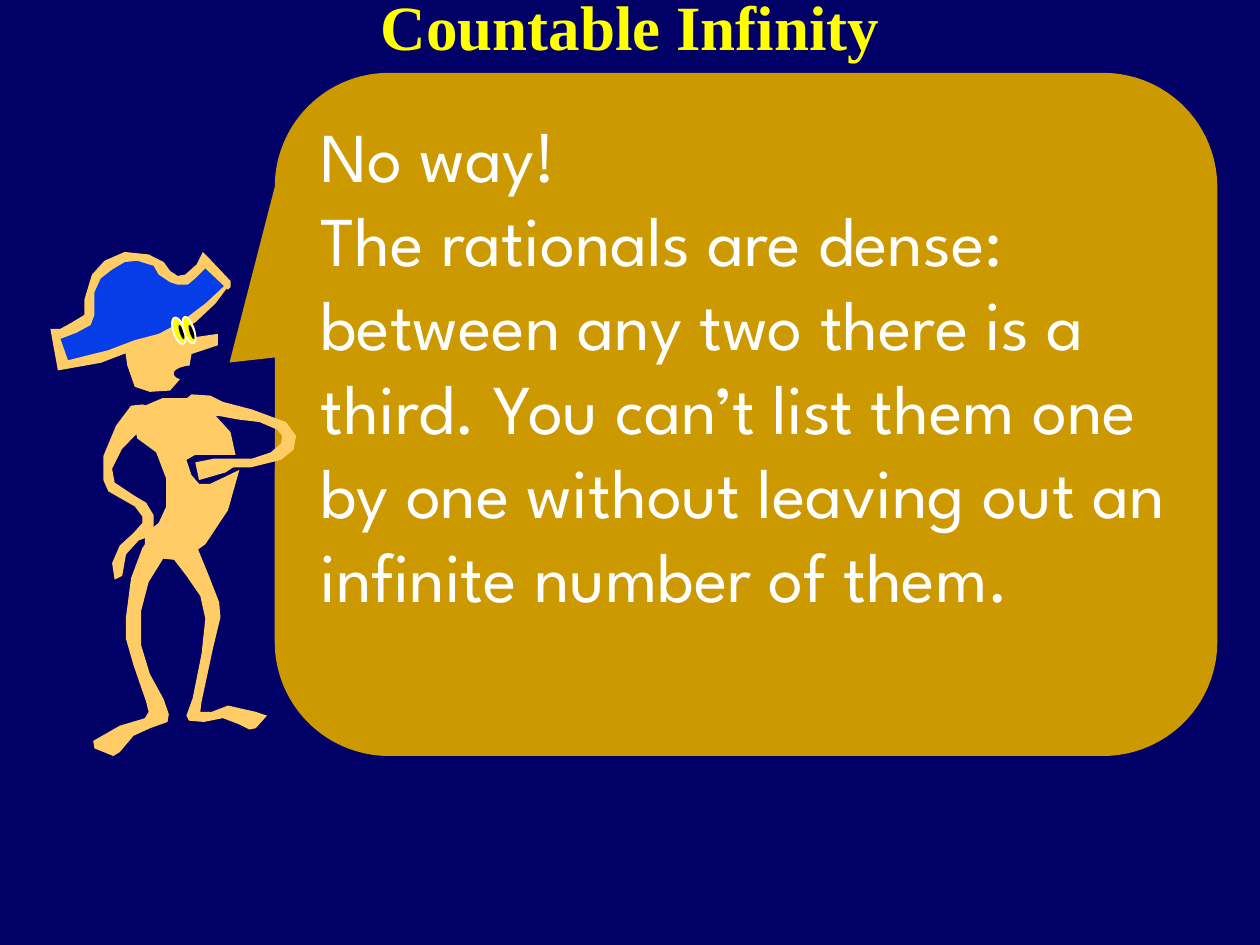
from dataclasses import dataclass

import pptx
import pptx.dml.color
import pptx.enum.shapes
import pptx.enum.text
import pptx.util

Cm = pptx.util.Cm
SHAPES = pptx.enum.shapes.MSO_SHAPE
ANCHORS = pptx.enum.text.MSO_ANCHOR
ALIGNMENTS = pptx.enum.text.PP_ALIGN

COLORS = {
    "night": "000066",
    "gold": "CC9900",
    "skin": "FFCC66",
    "hat": "063DE8",
    "yellow": "FFFF00",
    "white": "FFFFFF",
    "black": "000000",
}
GRID = Cm(0.0254)  # the pirate is drawn on a grid of this pitch


@dataclass
class Outline:
    color: str
    points: list[tuple[int, int]]


@dataclass
class Oval:
    color: str
    left: int
    top: int
    width: int
    height: int
    rotation: float = 0
    border: str | None = None


HEAD = Outline("skin", [
    (152, 268), (146, 244), (130, 236), (115, 236), (106, 244), (98, 269), (101, 290),
    (107, 307), (119, 311), (135, 310), (150, 293), (152, 281), (173, 274), (173, 265)])
TORSO = Outline("skin", [
    (183, 343), (163, 321), (151, 316), (129, 316), (108, 325), (106, 335), (109, 348),
    (124, 359), (132, 380), (132, 402), (126, 415), (115, 424), (115, 435), (120, 440),
    (126, 443), (145, 445), (163, 432), (181, 405), (190, 373), (167, 384), (158, 384),
    (152, 377), (148, 365), (155, 361), (181, 361), (187, 361)])
ARM_ON_HIP = Outline("skin", [
    (127, 332), (122, 324), (113, 321), (104, 322), (92, 338), (82, 362), (82, 381),
    (86, 390), (107, 402), (113, 410), (113, 415), (106, 423), (95, 433), (89, 447),
    (91, 460), (97, 457), (100, 440), (110, 429), (118, 426), (122, 421), (122, 409),
    (116, 399), (106, 393), (91, 383), (89, 372), (97, 356), (110, 343)])
BENT_ARM = Outline("skin", [
    (167, 314), (152, 313), (146, 318), (150, 326), (162, 330), (173, 330), (189, 333),
    (206, 335), (220, 341), (224, 346), (223, 352), (215, 359), (200, 364), (183, 364),
    (170, 364), (155, 367), (158, 381), (179, 375), (185, 371), (199, 371), (223, 365),
    (233, 357), (235, 346), (227, 335), (200, 325), (177, 319)])
BACK_LEG = Outline("skin", [
    (138, 419), (122, 422), (113, 435), (104, 459), (100, 490), (100, 507), (106, 528),
    (116, 557), (118, 565), (115, 570), (95, 576), (74, 588), (75, 594), (90, 600),
    (95, 597), (106, 584), (119, 578), (133, 573), (134, 567), (130, 555), (119, 535),
    (112, 512), (112, 485), (118, 462), (131, 441), (136, 429)])
FRONT_LEG = Outline("skin", [
    (141, 419), (137, 423), (135, 433), (138, 444), (148, 457), (159, 473), (163, 491),
    (160, 519), (153, 554), (148, 568), (150, 572), (162, 573), (177, 570), (190, 575),
    (198, 579), (203, 578), (212, 568), (203, 565), (181, 560), (168, 565), (159, 565),
    (160, 557), (169, 515), (175, 490), (174, 478), (165, 455), (156, 433)])
HAT = Outline("hat", [
    (181, 226), (163, 207), (155, 216), (146, 221), (136, 221), (126, 212), (115, 205),
    (101, 204), (87, 210), (77, 218), (73, 229), (72, 243), (69, 256), (61, 262),
    (51, 265), (42, 267), (49, 292), (72, 288), (95, 281), (113, 273), (133, 265),
    (155, 256), (172, 237)])
HAT_TRIM = Outline("skin", [
    (171, 241), (155, 256), (132, 267), (101, 280), (80, 288), (46, 294), (40, 261),
    (48, 261), (57, 256), (67, 250), (67, 238), (73, 218), (83, 207), (99, 200),
    (118, 202), (130, 208), (135, 215), (141, 219), (147, 218), (156, 210), (161, 200),
    (166, 205), (183, 223), (183, 228), (181, 230), (163, 213), (155, 221), (149, 226),
    (141, 226), (135, 224), (126, 218), (122, 211), (109, 207), (99, 208), (89, 214),
    (80, 221), (75, 232), (75, 240), (75, 250), (72, 258), (61, 264), (48, 269),
    (54, 286), (86, 278), (107, 270), (126, 265), (143, 256), (163, 241), (178, 227),
    (180, 229)])
BODY = [HEAD, TORSO, ARM_ON_HIP, BENT_ARM, BACK_LEG, FRONT_LEG, HAT, HAT_TRIM]

EYE_TILT = 71.4
FACE = [
    Oval("yellow", 131, 258, 22, 9, EYE_TILT, "white"),
    Oval("black", 138, 262, 12, 3, EYE_TILT),
    Oval("yellow", 139, 258, 22, 8, EYE_TILT, "white"),
    Oval("black", 146, 262, 12, 3, EYE_TILT),
    Oval("night", 138, 290, 33, 13),
]


def rgb(color: str) -> pptx.dml.color.RGBColor:
    return pptx.dml.color.RGBColor.from_string(COLORS[color])


def paint(shape, color: str, border: str | None = None) -> None:
    shape.shadow.inherit = False
    shape.fill.solid()
    shape.fill.fore_color.rgb = rgb(color)
    if border:
        shape.line.color.rgb = rgb(border)
        shape.line.width = pptx.util.Pt(1)
    else:
        shape.line.fill.background()


def draw_outline(shapes, outline: Outline) -> None:
    start, *rest = outline.points
    builder = shapes.build_freeform(*start, scale=float(GRID))
    builder.add_line_segments(rest, close=True)
    paint(builder.convert_to_shape(), outline.color)


def draw_oval(shapes, oval: Oval) -> None:
    box = [GRID * n for n in (oval.left, oval.top, oval.width, oval.height)]
    ellipse = shapes.add_shape(SHAPES.OVAL, *box)
    ellipse.rotation = oval.rotation
    paint(ellipse, oval.color, oval.border)


def write(frame, text: str, *, font: str, size: float, color: str, bold: bool = False,
          align=ALIGNMENTS.LEFT, anchor=ANCHORS.TOP) -> None:
    """Fill a text frame, one paragraph per line of text."""
    frame.text = text
    frame.word_wrap = True
    frame.auto_size = pptx.enum.text.MSO_AUTO_SIZE.NONE
    frame.vertical_anchor = anchor
    for paragraph in frame.paragraphs:
        paragraph.alignment = align
        for run in paragraph.runs:
            run.font.name = font
            run.font.size = pptx.util.Pt(size)
            run.font.bold = bold
            run.font.color.rgb = rgb(color)


def main() -> None:
    deck = pptx.Presentation()
    deck.slide_width, deck.slide_height = Cm(25.4), Cm(19.05)
    slide = deck.slides.add_slide(deck.slide_layouts[5])
    slide.background.fill.solid()
    slide.background.fill.fore_color.rgb = rgb("night")

    speech = slide.shapes.add_shape(
        SHAPES.ROUNDED_RECTANGULAR_CALLOUT, Cm(5.54), Cm(1.47), Cm(19), Cm(13.77))
    for index, value in enumerate((-0.548, -0.076, 0.167)):
        speech.adjustments[index] = value
    paint(speech, "gold")
    write(speech.text_frame,
          "No way!\nThe rationals are dense: between any two there is a third. "
          "You can’t list them one by one without leaving out an infinite number of them.",
          font="League Spartan", size=40, color="white")

    pirate = slide.shapes.add_group_shape()
    for outline in BODY:
        draw_outline(pirate.shapes, outline)
    for oval in FACE:
        draw_oval(pirate.shapes, oval)

    title = slide.shapes.title
    title.left, title.top, title.width, title.height = Cm(1.9), Cm(-1.07), Cm(21.6), Cm(3.18)
    write(title.text_frame, "Countable Infinity", font="Times New Roman", size=36,
          color="yellow", bold=True, align=ALIGNMENTS.CENTER, anchor=ANCHORS.MIDDLE)

    deck.save("out.pptx")


if __name__ == "__main__":
    main()
